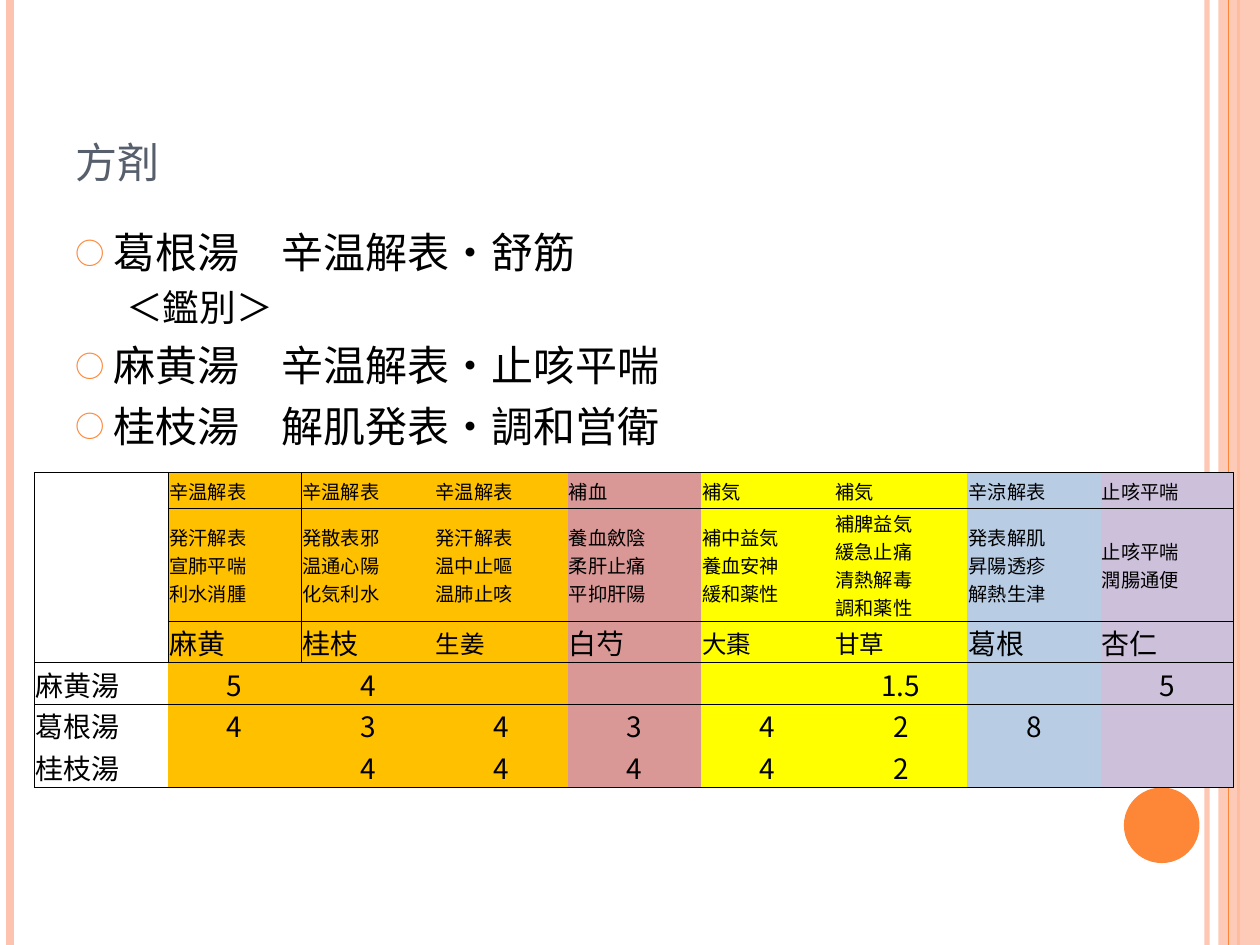
from lxml.etree import SubElement
from pptx import Presentation
from pptx.dml.color import RGBColor as RGB
from pptx.enum.shapes import MSO_CONNECTOR as CONN, MSO_SHAPE as SHAPE
from pptx.enum.text import MSO_ANCHOR as ANCHOR, PP_ALIGN as ALIGN
from pptx.oxml.ns import qn
from pptx.util import Inches, Pt

COLS, ROWS = 100, 75
CELL = Inches(0.1)
COLORS = {
    "orange": "FE8637", "peach": "FEC3AE", "slate": "575F6D", "black": "000000",
    "warm": "FFC000", "blood": "D99795", "qi": "FFFF00", "cool": "B8CCE4", "cough": "CCC0DA",
}
SERIF, SANS = "TeX Gyre Schola", "Noto Sans CJK JP"

BULLETS = [
    ("葛根湯　辛温解表・舒筋", 0),
    ("＜鑑別＞", 1),
    ("麻黄湯　辛温解表・止咳平喘", 0),
    ("桂枝湯　解肌発表・調和営衛", 0),
]
HERBS = [
    ("warm", "辛温解表", "発汗解表\n宣肺平喘\n利水消腫", "麻黄", 16, ("5", "4", "")),
    ("warm", "辛温解表", "発散表邪\n温通心陽\n化気利水", "桂枝", 16, ("4", "3", "4")),
    ("warm", "辛温解表", "発汗解表\n温中止嘔\n温肺止咳", "生姜", 14, ("", "4", "4")),
    ("blood", "補血", "養血斂陰\n柔肝止痛\n平抑肝陽", "白芍", 16, ("", "3", "4")),
    ("qi", "補気", "補中益気\n養血安神\n緩和薬性", "大棗", 14, ("", "4", "4")),
    ("qi", "補気", "補脾益気\n緩急止痛\n清熱解毒\n調和薬性", "甘草", 14, ("1.5", "2", "2")),
    ("cool", "辛涼解表", "発表解肌\n昇陽透疹\n解熱生津", "葛根", 16, ("", "8", "")),
    ("cough", "止咳平喘", "止咳平喘\n潤腸通便", "杏仁", 16, ("5", "", "")),
]
FORMULAS = ["麻黄湯", "葛根湯", "桂枝湯"]
HEADS = 3
ROW_HEIGHTS = [2.8, 8.2] + [2.8] * 4


def grid(*units):
    return [round(u * CELL) for u in units]


def color(name):
    return RGB.from_string(COLORS[name])


def set_alpha(sp, percent):
    clr = sp._element.spPr.find(f".//{qn('a:srgbClr')}")
    SubElement(clr, qn("a:alpha"), val=str(percent * 1000))


def add_rule(slide, x, name, width, alpha=100):
    ln = slide.shapes.add_connector(CONN.STRAIGHT, *grid(x, 0, x, ROWS))
    ln.line.color.rgb = color(name)
    ln.line.width = Pt(width)
    SubElement(ln._element.spPr, qn("a:effectLst"))
    if alpha < 100:
        set_alpha(ln, alpha)


def add_block(slide, kind, box, name, alpha=100):
    sp = slide.shapes.add_shape(kind, *grid(*box))
    sp.shadow.inherit = False
    sp.fill.solid()
    sp.fill.fore_color.rgb = color(name)
    sp.line.fill.background()
    if alpha < 100:
        set_alpha(sp, alpha)


def add_run(p, text, size, font, name="black"):
    r = p.add_run()
    r.text = text
    r.font.size = Pt(size)
    r.font.name = font
    r.font.color.rgb = color(name)
    SubElement(r._r.get_or_add_rPr(), qn("a:ea"), typeface=font)
    return r


def place(sp, *box):
    sp.left, sp.top, sp.width, sp.height = grid(*box)
    return sp.text_frame


def fill_title(sp, text):
    tf = place(sp, 5, 3, 81.7, 12.5)
    tf.vertical_anchor = ANCHOR.BOTTOM
    p = tf.paragraphs[0]
    p.alignment = ALIGN.LEFT
    r = add_run(p, text, 30, SERIF, "slate")
    r._r.rPr.set("cap", "small")


def fill_body(sp, items):
    tf = place(sp, 5, 17.5, 81.7, 53.3)
    for i, (text, level) in enumerate(items):
        p = tf.add_paragraph() if i else tf.paragraphs[0]
        p.level = level
        p.space_before = Pt(4.2 if level else 6)
        pPr = p._p.get_or_add_pPr()
        pPr.set("marL", str(Inches(0.7 if level else 0.3)))
        pPr.set("indent", str(-Inches(0.3)))
        if level:
            SubElement(pPr, qn("a:buNone"))
        else:
            clr = SubElement(pPr, qn("a:buClr"))
            SubElement(clr, qn("a:srgbClr"), val=COLORS["orange"])
            SubElement(pPr, qn("a:buSzPct"), val="70000")
            SubElement(pPr, qn("a:buFont"), typeface=SANS)
            SubElement(pPr, qn("a:buChar"), char="○")
        add_run(p, text, 21 if level else 24, SERIF)


def fill_cell(cell, text, size, centred):
    cell.vertical_anchor = ANCHOR.MIDDLE
    cell.margin_left = cell.margin_top = cell.margin_right = Inches(0.01)
    cell.margin_bottom = 0
    p = cell.text_frame.paragraphs[0]
    if centred:
        p.alignment = ALIGN.CENTER
    if not text:
        SubElement(p._p, qn("a:endParaRPr"), sz=str(size * 100))
        return
    for i, line in enumerate(text.split("\n")):
        if i:
            p.add_line_break()
        add_run(p, line, size, SANS)


def set_borders(cell, row, col):
    last_row, last_col = len(ROW_HEIGHTS) - 1, len(HERBS)
    head = row < HEADS
    sides = {
        "L": col == 0 or (head and col == 1),
        "R": col == last_col or (head and col == 0),
        "T": row in (0, HEADS) or (head and col > 0),
        "B": row in (HEADS - 1, last_row) or (head and col > 0),
    }
    tcPr = cell._tc.get_or_add_tcPr()
    for side in (s for s, drawn in sides.items() if drawn):
        ln = SubElement(tcPr, qn(f"a:ln{side}"), w=str(Pt(0.5)))
        fill = SubElement(ln, qn("a:solidFill"))
        SubElement(fill, qn("a:srgbClr"), val=COLORS["black"])


def add_herb_table(slide):
    box = grid(2.75, 37.5, 95.2, sum(ROW_HEIGHTS))
    frame = slide.shapes.add_table(len(ROW_HEIGHTS), len(HERBS) + 1, *box)
    table = frame.table
    table.first_row = table.horz_banding = False
    style = table._tbl.tblPr.find(qn("a:tableStyleId"))
    style.text = "{2D5ABB26-0587-4C30-8999-92F81FD0307C}"
    for row, height in zip(table.rows, ROW_HEIGHTS):
        row.height = grid(height)[0]
    columns = [(None, [""] * HEADS + FORMULAS, 16)]
    columns += [(name, [kind, effect, herb, *doses], size)
                for name, kind, effect, herb, size, doses in HERBS]
    for c, (name, texts, herb_size) in enumerate(columns):
        for r, text in enumerate(texts):
            cell = table.cell(r, c)
            size = (11, 11, herb_size)[r] if r < HEADS and c else 16
            fill_cell(cell, text, size, r >= HEADS and c > 0)
            set_borders(cell, r, c)
            if name:
                cell.fill.solid()
                cell.fill.fore_color.rgb = color(name)
            else:
                cell.fill.background()


def main():
    prs = Presentation()
    prs.slide_width, prs.slide_height = grid(COLS, ROWS)
    slide = prs.slides.add_slide(prs.slide_layouts[1])
    add_rule(slide, 95.8, "peach", 3, 93)
    add_rule(slide, 0.8, "peach", 4.5)
    add_rule(slide, 98.3, "orange", 1.5)
    add_block(slide, SHAPE.RECTANGLE, (96.7, 0, 3.3, ROWS), "peach", 87)
    add_rule(slide, 97.5, "orange", 0.75)
    add_block(slide, SHAPE.OVAL, (89.2, 62.5, 6, 6), "orange")
    fill_title(slide.shapes.title, "方剤")
    fill_body(slide.placeholders[1], BULLETS)
    add_herb_table(slide)
    prs.save("out.pptx")


if __name__ == "__main__":
    main()
